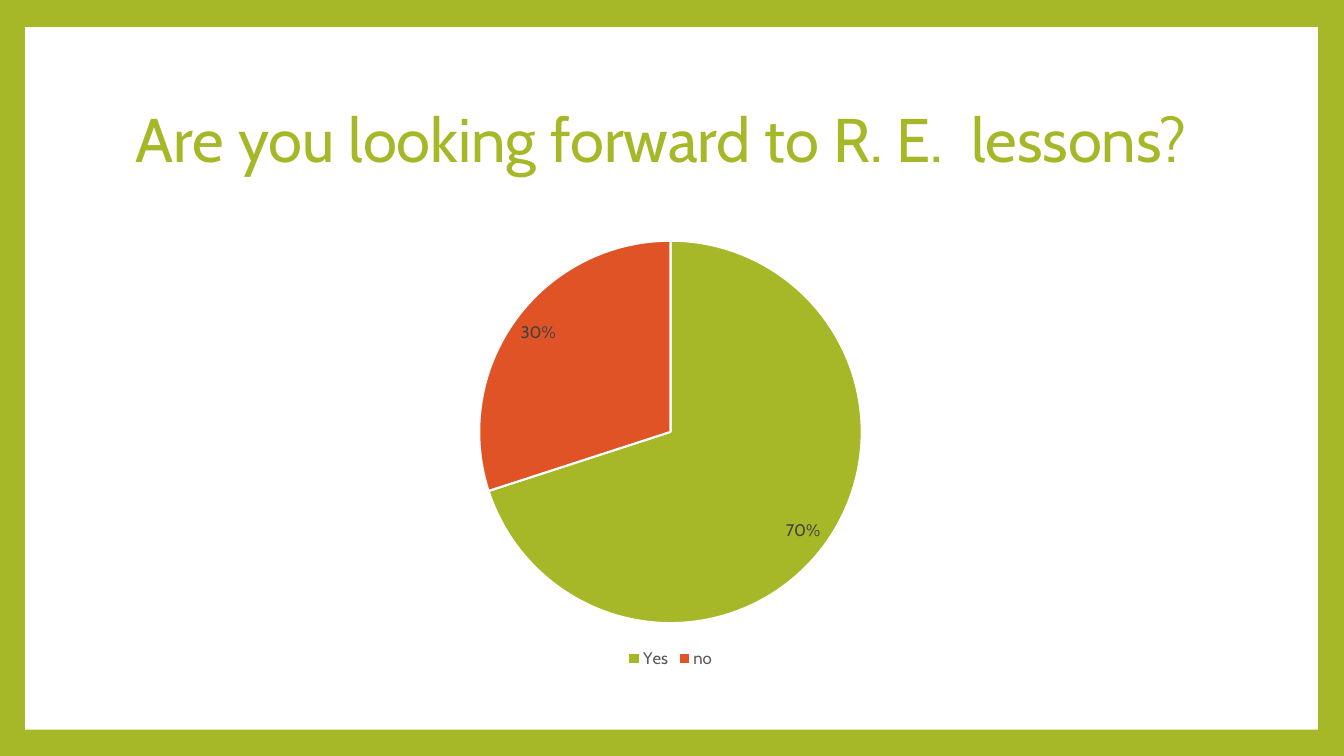
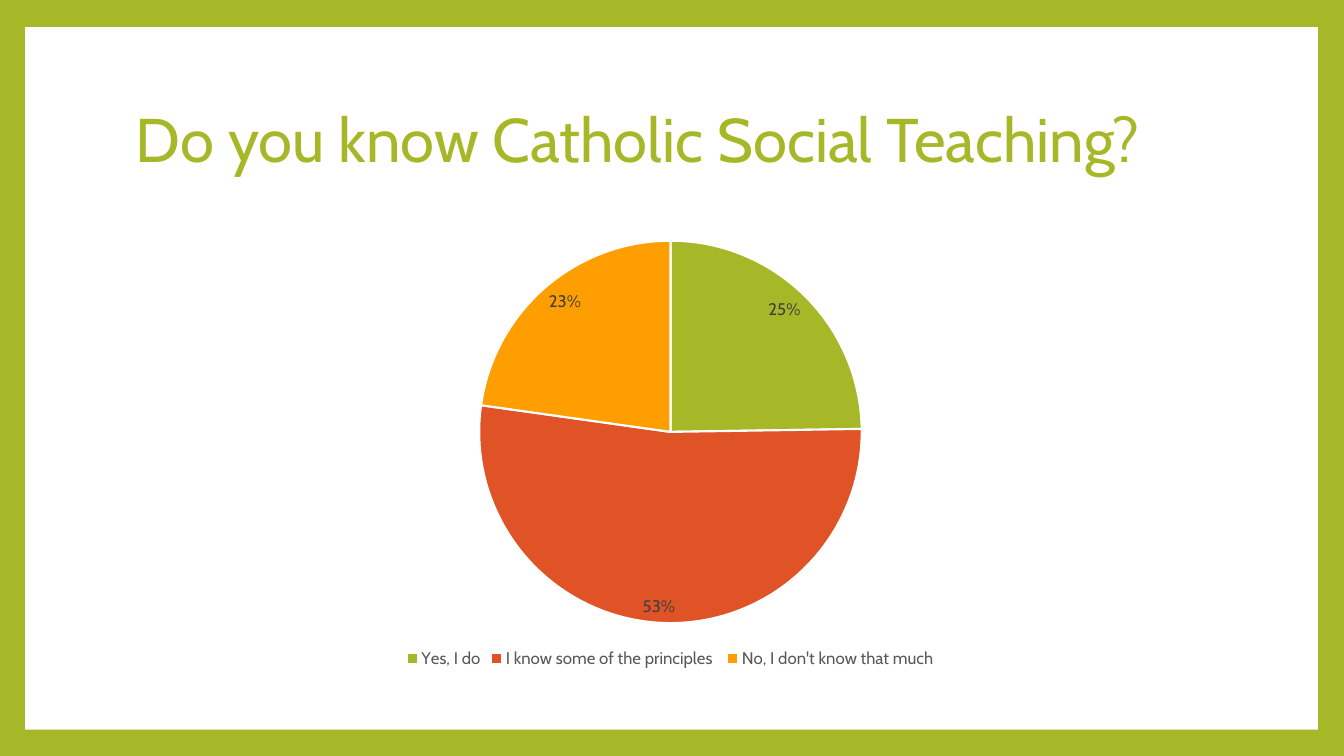
from pptx import Presentation
from pptx import util as u
from pptx.chart import data as cd
from pptx.dml import color as dc
from pptx.enum import chart as ec, shapes, text

HUES = {
    "green": "A6B727", "red": "DF5327", "gold": "FE9E00",
    "white": "FFFFFF", "label": "404040", "key": "595959",
}
SLICES = ("green", "red", "gold")
POLLS = [
    ("Are you looking forward to R. E.  lessons?",
     {"Yes": 70, "no": 30}),
    ("Do you know Catholic Social Teaching?",
     {"Yes, I do": 25, "I know some of the principles ": 53,
      "No, I don't know that much": 23}),
]


class Deck:
    """Hold the shared style and the current slide."""

    face = "Cabin"
    left, width = 1.25, 10.8

    def __init__(self):
        self.show = Presentation()
        self.show.slide_width = u.Inches(13.33)
        self.show.slide_height = u.Inches(7.5)
        self.slide = None

    def rgb(self, hue):
        return dc.RGBColor.from_string(HUES[hue])

    def paint(self, fill, hue):
        fill.solid()
        fill.fore_color.rgb = self.rgb(hue)

    def style(self, font, size, hue):
        font.name = self.face
        font.size = u.Pt(size)
        font.color.rgb = self.rgb(hue)

    def box(self, top, height):
        return [u.Inches(n) for n in (self.left, top, self.width, height)]

    def page(self):
        self.slide = self.show.slides.add_slide(self.show.slide_layouts[6])
        self.paint(self.slide.background.fill, "green")
        panel = self.slide.shapes.add_shape(
            shapes.MSO_SHAPE.RECTANGLE,
            *[u.Inches(n) for n in (0.25, 0.27, 12.82, 6.97)])
        panel.shadow.inherit = False
        self.paint(panel.fill, "white")
        panel.line.fill.background()

    def title(self, words):
        frame = self.slide.shapes.add_textbox(*self.box(0.67, 1.48)).text_frame
        frame.word_wrap = True
        frame.vertical_anchor = text.MSO_ANCHOR.MIDDLE
        frame.text = words
        para = frame.paragraphs[0]
        para.line_spacing = 0.9
        self.style(para.runs[0].font, 44, "green")

    def pie(self, votes):
        data = cd.CategoryChartData()
        data.categories = list(votes)
        data.add_series("Series 1", list(votes.values()))
        chart = self.slide.shapes.add_chart(
            ec.XL_CHART_TYPE.PIE, *self.box(2.25, 4.42), data).chart
        chart.has_title = False
        chart.has_legend = True
        chart.legend.position = ec.XL_LEGEND_POSITION.BOTTOM
        chart.legend.include_in_layout = False
        self.style(chart.legend.font, 12, "key")
        plot = chart.plots[0]
        plot.vary_by_categories = True
        for spot, hue in zip(range(len(votes)), SLICES):
            form = plot.series[0].points[spot].format
            self.paint(form.fill, hue)
            form.line.color.rgb = self.rgb("white")
            form.line.width = u.Pt(1.5)
        plot.has_data_labels = True
        labels = plot.data_labels
        labels.show_percentage = False
        labels.show_value = True
        labels.number_format = '0"%"'
        labels.number_format_is_linked = False
        labels.position = ec.XL_LABEL_POSITION.INSIDE_END
        self.style(labels.font, 12, "label")


def main():
    deck = Deck()
    for words, votes in POLLS:
        deck.page()
        deck.title(words)
        deck.pie(votes)
    deck.show.save("out.pptx")


if __name__ == "__main__":
    main()
